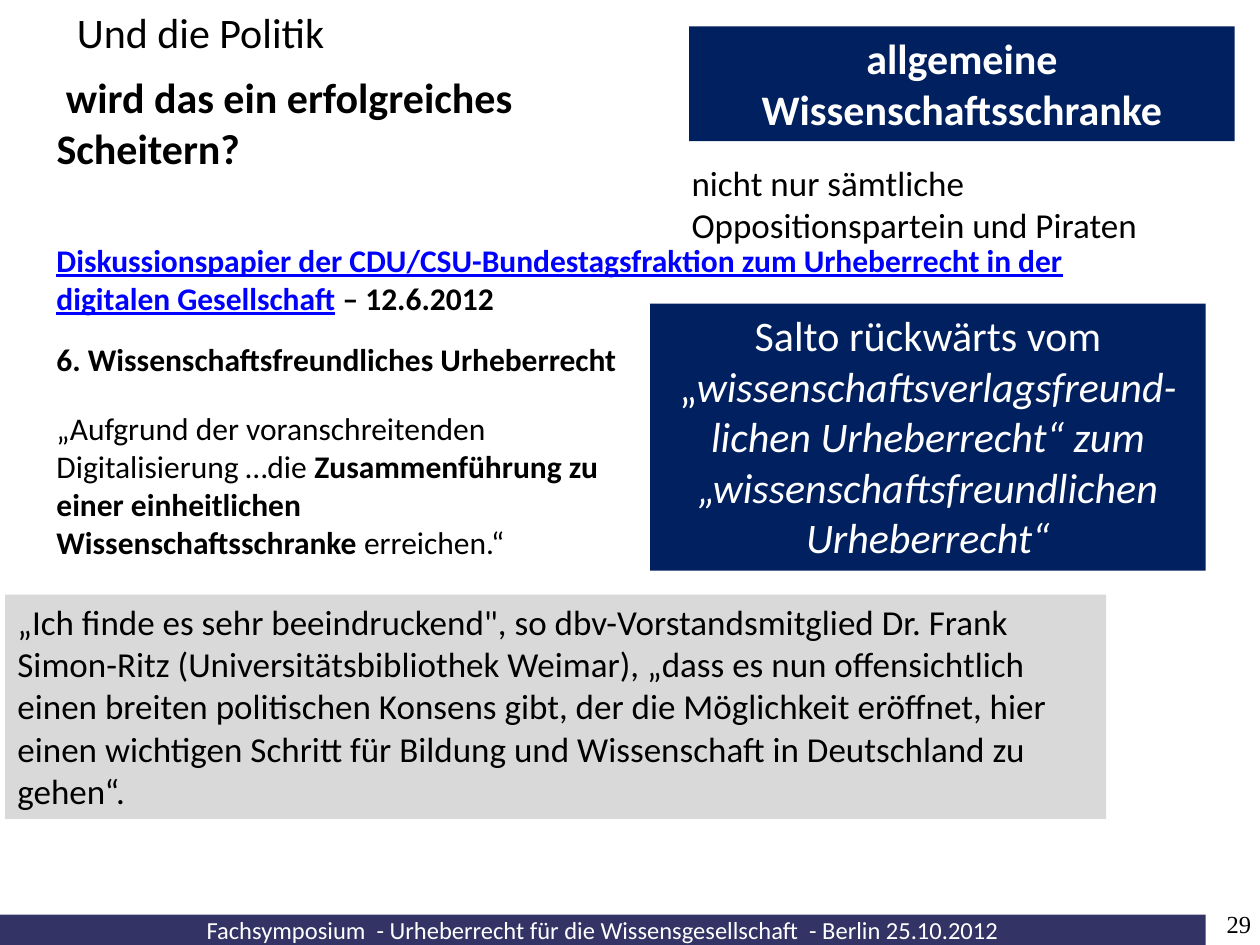
from pptx import Presentation
from pptx import util as u
from pptx.dml.color import RGBColor
from pptx.enum import shapes, text

COLORS = {"navy": "002060", "footer": "333366", "gray": "D9D9D9",
          "white": "FFFFFF", "black": "000000", "link": "0000FF"}
WIDTH, HEIGHT = 10, 7.5
LEFT = 0.35
CONTENT_WIDTH = 8.43
FOOTER_TOP = 7.26
BODY_RIGHT = 9.57

BOLD = {"bold": True}
ITALIC = {"italic": True}
LINK = {"bold": True, "underline": True, "color": "link"}

TITLE = {"at": (0.51, 0, 3.31, 0.5), "size": 24, "runs": [("Und die Politik", {})]}

BLOCKS = [
    {"at": (0, FOOTER_TOP, BODY_RIGHT, HEIGHT - FOOTER_TOP), "fill": "footer", "size": 14,
     "color": "white", "align": "CENTER", "anchor": "MIDDLE", "inset": 0,
     "runs": [("Fachsymposium  - Urheberrecht für die Wissensgesellschaft  - Berlin 25.10.2012", {})]},
    {"at": (9.25, 6.98, 0.68, 0.47), "size": 14, "font": "Times New Roman",
     "align": "RIGHT", "anchor": "BOTTOM", "inset": 0, "runs": [("29", {})]},
    {"at": (5.47, 0.21, 4.33, 0.91), "fill": "navy", "size": 24, "color": "white",
     "align": "CENTER", "runs": [("allgemeine Wissenschaftsschranke", BOLD)]},
    {"at": (LEFT, 0.21, 4.41, 1.21), "size": 24, "anchor": "BOTTOM",
     "runs": [(" wird das ein erfolgreiches Scheitern?", BOLD)]},
    {"at": (5.39, 1.23, 3.86, 0.77), "size": 20,
     "runs": [("nicht nur sämtliche Oppositionspartein und Piraten", {})]},
    {"at": (LEFT, 1.55, CONTENT_WIDTH, 1.01), "size": 18, "anchor": "BOTTOM",
     "runs": [("Diskussionspapier der CDU/CSU-Bundestagsfraktion zum Urheberrecht in der "
               "digitalen Gesellschaft", LINK), (" – 12.6.2012", BOLD)]},
    {"at": (LEFT, 2.65, CONTENT_WIDTH, 0.4), "size": 18,
     "runs": [("6. Wissenschaftsfreundliches Urheberrecht", BOLD)]},
    {"at": (LEFT, 3.2, 4.57, 1.31), "size": 18,
     "runs": [("„Aufgrund der voranschreitenden Digitalisierung …die ", {}),
              ("Zusammenführung zu einer einheitlichen Wissenschaftsschranke ", BOLD),
              ("erreichen.“", {})]},
    {"at": (5.16, 2.41, BODY_RIGHT - 5.16, 2.12), "fill": "navy", "size": 24, "color": "white",
     "align": "CENTER",
     "runs": [("Salto rückwärts vom „", {}),
              ("wissenschaftsverlagsfreund-lichen Urheberrecht“ zum "
               "„wissenschaftsfreundlichen Urheberrecht“", ITALIC)]},
    {"at": (0.04, 4.72, 8.74, 1.78), "fill": "gray", "size": 20,
     "runs": [("„Ich finde es sehr beeindruckend\", so dbv-Vorstandsmitglied Dr. Frank "
               "Simon-Ritz (Universitätsbibliothek Weimar), „dass es nun offensichtlich "
               "einen breiten politischen Konsens gibt, der die Möglichkeit eröffnet, hier "
               "einen wichtigen Schritt für Bildung und Wissenschaft in Deutschland zu "
               "gehen“.", {})]},
]


def rgb(name):
    return RGBColor.from_string(COLORS[name])


def write_text(shape, block):
    frame = shape.text_frame
    frame.word_wrap = True
    frame.auto_size = text.MSO_AUTO_SIZE.NONE
    frame.vertical_anchor = text.MSO_ANCHOR[block.get("anchor", "TOP")]
    if "inset" in block:
        inset = u.Inches(block["inset"])
        frame.margin_left = frame.margin_right = inset
        frame.margin_top = frame.margin_bottom = inset
    paragraph = frame.paragraphs[0]
    paragraph.alignment = text.PP_ALIGN[block.get("align", "LEFT")]
    for words, style in block["runs"]:
        run = paragraph.add_run()
        run.text = words
        font = run.font
        font.name = block.get("font", "Calibri")
        font.size = u.Pt(block["size"])
        font.bold = style.get("bold", False)
        font.italic = style.get("italic", False)
        font.underline = style.get("underline", False)
        font.color.rgb = rgb(style.get("color", block.get("color", "black")))


def add_block(slide, block):
    box = [u.Inches(length) for length in block["at"]]
    if "fill" in block:
        shape = slide.shapes.add_shape(shapes.MSO_SHAPE.RECTANGLE, *box)
        shape.shadow.inherit = False
        shape.fill.solid()
        shape.fill.fore_color.rgb = rgb(block["fill"])
        shape.line.fill.background()
    else:
        shape = slide.shapes.add_textbox(*box)
    write_text(shape, block)


def main():
    presentation = Presentation()
    presentation.slide_width = u.Inches(WIDTH)
    presentation.slide_height = u.Inches(HEIGHT)
    slide = presentation.slides.add_slide(presentation.slide_layouts[5])
    title = slide.shapes.title
    title.left, title.top, title.width, title.height = [u.Inches(n) for n in TITLE["at"]]
    write_text(title, TITLE)
    for block in BLOCKS:
        add_block(slide, block)
    presentation.save("out.pptx")


if __name__ == "__main__":
    main()
